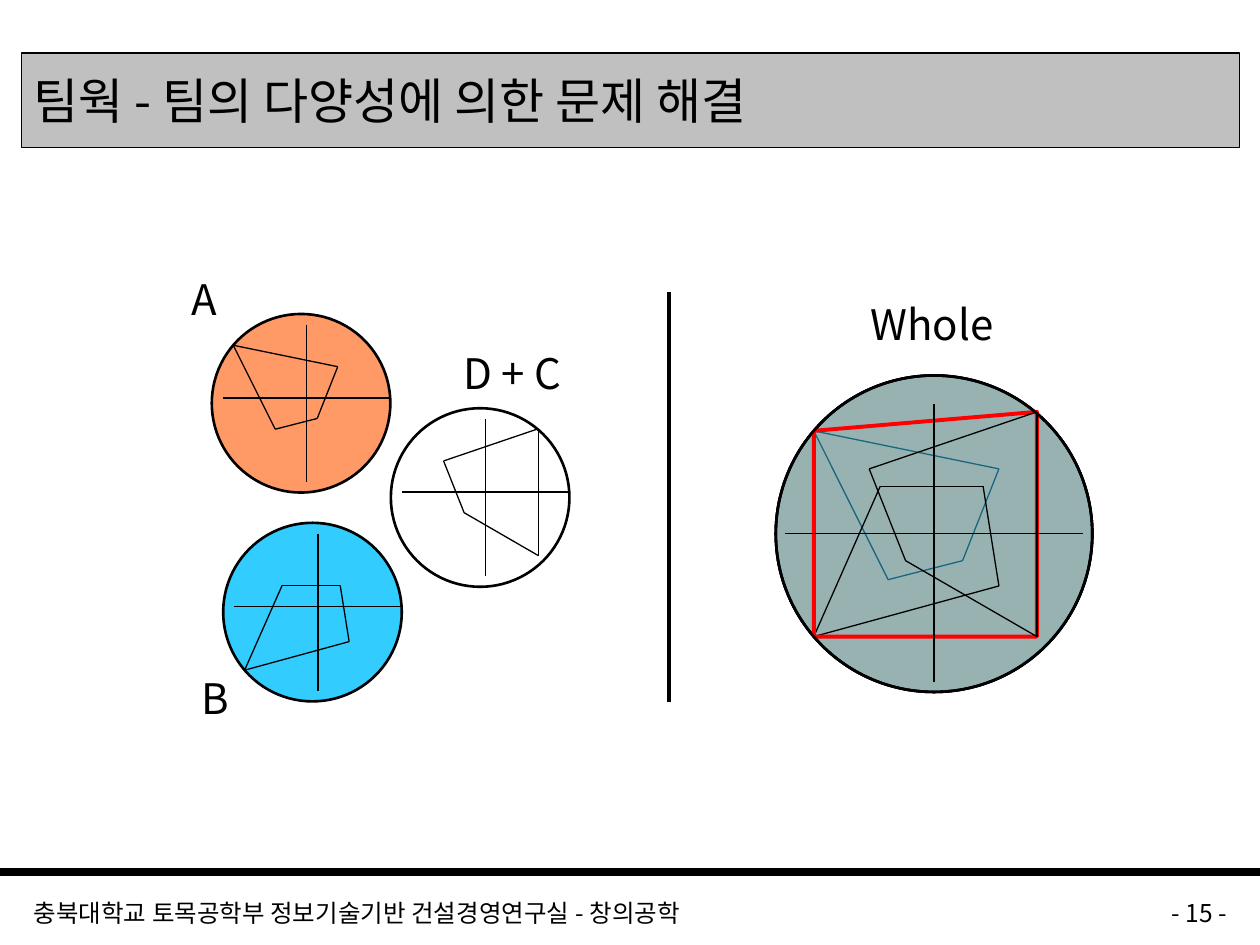
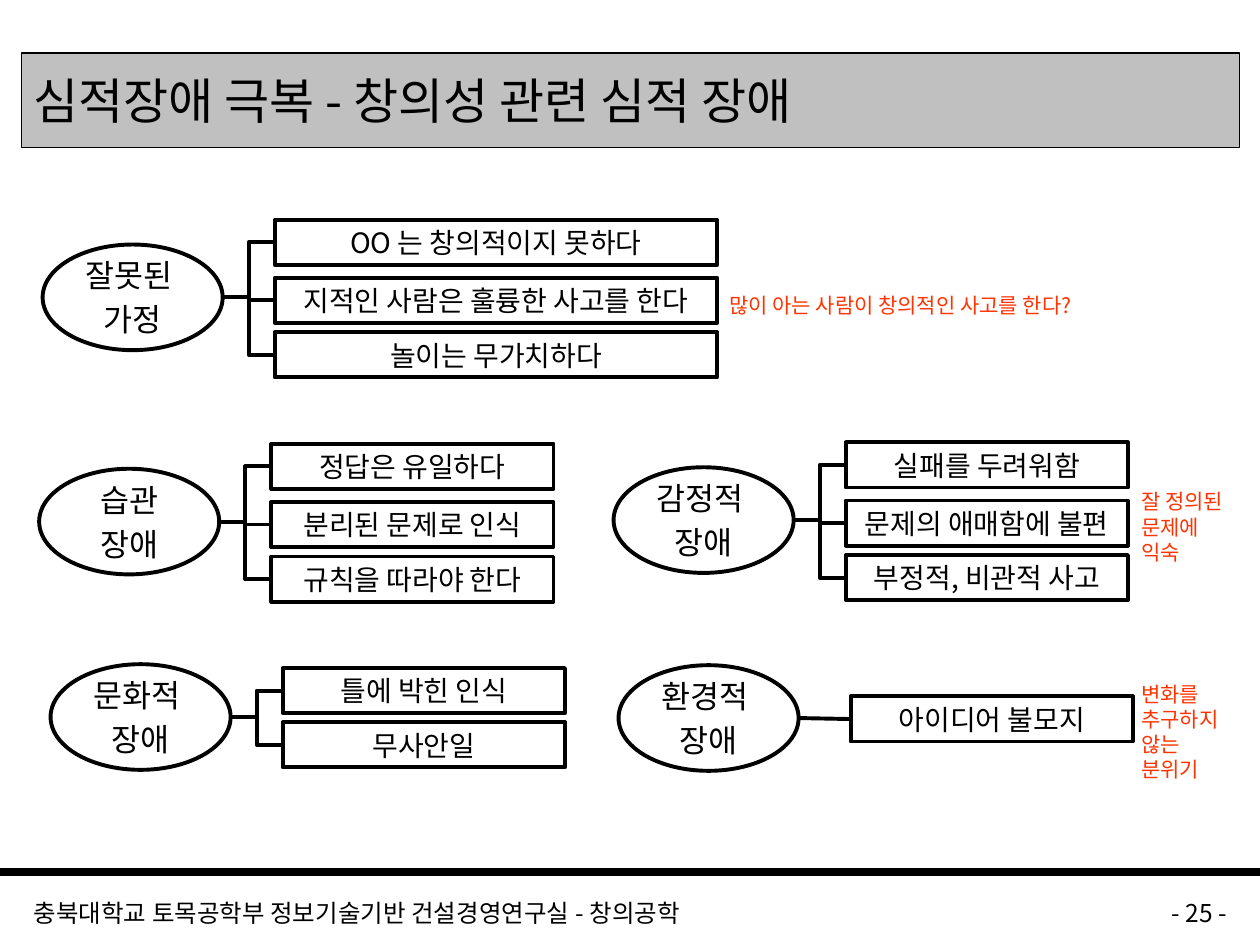
"""Build two lecture slides on team diversity and mental blocks to creativity."""
import pptx
import pptx.dml.color
import pptx.enum.shapes
import pptx.enum.text
import pptx.oxml.ns
import pptx.util
from lxml import etree

Cm = pptx.util.Cm
Pt = pptx.util.Pt
RGBColor = pptx.dml.color.RGBColor
SHAPE = pptx.enum.shapes.MSO_SHAPE
CONNECTOR = pptx.enum.shapes.MSO_CONNECTOR
ALIGN = pptx.enum.text.PP_ALIGN
ANCHOR = pptx.enum.text.MSO_ANCHOR
GROW = pptx.enum.text.MSO_AUTO_SIZE.SHAPE_TO_FIT_TEXT
qn = pptx.oxml.ns.qn

BLACK = RGBColor(0x00, 0x00, 0x00)
GREY = RGBColor(0xC0, 0xC0, 0xC0)
ORANGE = RGBColor(0xFF, 0x99, 0x66)
BLUE = RGBColor(0x33, 0xCC, 0xFF)
RED = RGBColor(0xFF, 0x00, 0x00)
NOTE_RED = RGBColor(0xFF, 0x33, 0x00)
FONT = "Noto Sans CJK KR"

TITLE = {"vertical_anchor": ANCHOR.MIDDLE, "word_wrap": True}
NODE = {"vertical_anchor": ANCHOR.MIDDLE, "word_wrap": False}
FOOTER = {"vertical_anchor": ANCHOR.TOP, "word_wrap": True}
LABEL = {"word_wrap": False, "auto_size": GROW}
NOTE = {"word_wrap": True, "auto_size": GROW}


def add_box(shapes, preset, at, lines=(), size=16, fmt=NODE, align=ALIGN.LEFT,
            color=BLACK, fill=None, width=2.25, before=0):
    x, y, w, h = [Cm(v) for v in at]
    if preset is None:
        sp = shapes.add_textbox(x, y, w, h)
    else:
        sp = shapes.add_shape(preset, x, y, w, h)
        sp.shadow.inherit = False
        sp.line.color.rgb = BLACK
        sp.line.width = Pt(width)
        if fill is None:
            sp.fill.background()
        else:
            sp.fill.solid()
            sp.fill.fore_color.rgb = fill
    tf = sp.text_frame
    for name, value in fmt.items():
        setattr(tf, name, value)
    for i, text in enumerate(lines):
        p = tf.paragraphs[0] if i == 0 else tf.add_paragraph()
        p.alignment = align
        p.space_before = Pt(before * size)
        r = p.add_run()
        r.text = text
        for name, value in {"size": Pt(size), "name": FONT}.items():
            setattr(r.font, name, value)
        r.font.color.rgb = color
        etree.SubElement(r.font._element, qn("a:ea"), typeface=FONT)
    return sp


def add_line(shapes, start, end, width=0.75, kind=CONNECTOR.STRAIGHT):
    cn = shapes.add_connector(kind, *[Cm(v) for v in (*start, *end)])
    cn.line.color.rgb = BLACK
    cn.line.width = Pt(width)
    etree.SubElement(cn._element.spPr, qn("a:effectLst"))
    return cn


prs = pptx.Presentation()
prs.slide_width = Cm(25.4)
prs.slide_height = Cm(19.05)

slides = []
for title, number in [("팀웍 - 팀의 다양성에 의한 문제 해결", 15),
                      ("심적장애 극복 - 창의성 관련 심적 장애", 25)]:
    s = prs.slides.add_slide(prs.slide_layouts[6])
    add_line(s.shapes, (0, 17.58), (25.4, 17.58), 4.5)
    add_box(s.shapes, None, (0.43, 17.98, 19.89, 0.64),
            ["충북대학교 토목공학부 정보기술기반 건설경영연구실 - 창의공학"], 14, FOOTER)
    add_box(s.shapes, None, (20.75, 17.98, 4.24, 0.64),
            [f"- {number} -"], 14, FOOTER, ALIGN.RIGHT)
    add_box(s.shapes, SHAPE.RECTANGLE, (0.43, 1.07, 24.56, 1.9),
            [title], 28, TITLE, fill=GREY, width=0.75)
    slides.append(s)
team, blocks = slides

for text, x, y, w in [("A", 3.61, 5.38, 1.02), ("B", 3.81, 13.44, 1.04),
                      ("D + C", 9.09, 6.88, 2.64), ("Whole", 17.3, 5.89, 3.07)]:
    add_box(team.shapes, None, (x, y, w, 1.3), [text], 24, LABEL)
add_line(team.shapes, (13.49, 5.89), (13.49, 14.15), 2.25)

# Corners and axes are in units of the circle's radius, from its centre.
A = [(-0.76, -0.65), (-0.29, 0.29), (0.18, 0.17), (0.41, -0.41)]
B = [(-0.76, 0.65), (-0.34, -0.3), (0.31, -0.3), (0.41, 0.33)]
DC = [(-0.18, 0.17), (-0.41, -0.41), (0.65, -0.77), (0.65, 0.65)]
MEMBER_AXES = [((-0.88, -0.06), (1, -0.06)), ((0.06, -0.88), (0.06, 0.88))]
WHOLE_AXES = [((-0.94, 0), (0.94, 0)), ((0, -0.82), (0, 0.94))]
WHOLE = (18.83, 10.76, 3.19)

circles = [
    ((6.07, 8.13, 1.8), ORANGE, A, MEMBER_AXES),
    ((6.3, 12.34, 1.8), BLUE, B, MEMBER_AXES),
    ((9.68, 10.03, 1.8), None, DC, MEMBER_AXES),
    (WHOLE, ORANGE, A, []),
    (WHOLE, BLUE, B, []),
    (WHOLE, None, DC, WHOLE_AXES),
]
for (cx, cy, radius), fill, corners, axes in circles:
    in_whole = (cx, cy, radius) == WHOLE
    shapes = team.shapes if in_whole else team.shapes.add_group_shape().shapes
    if in_whole and corners is DC:
        outline = [(Cm(cx + radius * x), Cm(cy + radius * y))
                   for x, y in (A[0], B[0], DC[3], DC[2])]
        fb = shapes.build_freeform(*outline[0])
        fb.add_line_segments(outline[1:], close=True)
        sp = fb.convert_to_shape()
        sp.shadow.inherit = False
        sp.fill.background()
        sp.line.color.rgb = RED
        sp.line.width = Pt(2.25)
    sp = add_box(shapes, SHAPE.OVAL, (cx - radius, cy - radius, 2 * radius, 2 * radius),
                 fill=fill, width=1.5)
    if in_whole and fill == BLUE:
        clr = sp._element.spPr.find(qn("a:solidFill")).find(qn("a:srgbClr"))
        etree.SubElement(clr, qn("a:alpha"), val="50000")
    for start, end in axes + list(zip(corners, corners[1:] + corners[:1])):
        add_line(shapes, *[(cx + radius * x, cy + radius * y) for x, y in (start, end)])

OVAL_W, OVAL_H = 3.63, 2.13
ITEM_DX, ITEM_H = 4.68, 0.91
ITEM_DY = {1: [0.63], 2: [0.08, 1.17], 3: [-0.5, 0.67, 1.77]}
trees = [
    (0.86, 4.93, 8.92, ["잘못된 ", "가정"],
     ["OO 는 창의적이지 못하다", "지적인 사람은 훌륭한 사고를 한다", "놀이는 무가치하다"]),
    (0.79, 9.45, 5.69, ["습관", "장애"],
     ["정답은 유일하다", "분리된 문제로 인식", "규칙을 따라야 한다"]),
    (12.37, 9.42, 5.69, ["감정적 ", "장애"],
     ["실패를 두려워함", "문제의 애매함에 불편", "부정적, 비관적 사고"]),
    (1.02, 13.39, 5.69, ["문화적 ", "장애"], ["틀에 박힌 인식", "무사안일"]),
    (12.47, 13.41, 5.69, ["환경적 ", "장애"], ["아이디어 불모지"]),
]
for x, y, item_w, block, items in trees:
    add_box(blocks.shapes, SHAPE.OVAL, (x, y, OVAL_W, OVAL_H), block, 18,
            align=ALIGN.CENTER, before=0.2)
    kind = CONNECTOR.STRAIGHT if len(items) == 1 else CONNECTOR.ELBOW
    for text, dy in zip(items, ITEM_DY[len(items)]):
        sp = add_box(blocks.shapes, SHAPE.RECTANGLE, (x + ITEM_DX, y + dy, item_w, ITEM_H),
                     [text], align=ALIGN.CENTER, before=0.2)
        cn = add_line(blocks.shapes, (x + OVAL_W, y + OVAL_H / 2),
                      (x + ITEM_DX, y + dy + ITEM_H / 2), 2.25, kind)
        if kind == CONNECTOR.STRAIGHT:
            cn.end_connect(sp, 1)

for at, lines, fmt in [
    ((14.45, 5.77, 8.31, 0.76), ["많이 아는 사람이 창의적인 사고를 한다?"], LABEL),
    ((22.76, 9.73, 2.39, 1.8), ["잘 정의된 문제에 익숙"], NOTE),
    ((22.76, 13.61, 2.39, 2.31), ["변화를", "추구하지 않는", "분위기"], NOTE),
]:
    add_box(blocks.shapes, None, at, lines, 12, fmt, color=NOTE_RED)

prs.save("out.pptx")
